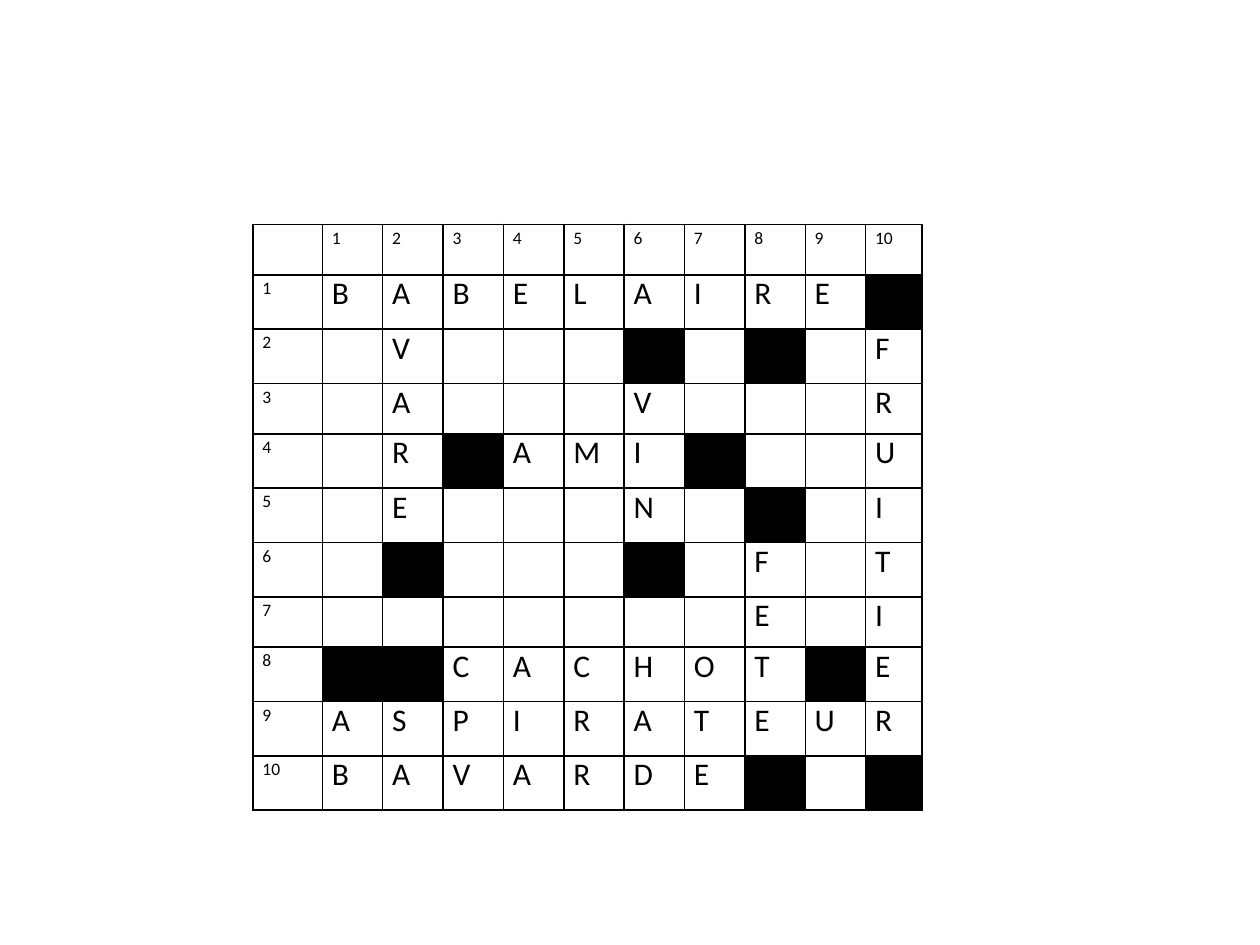
from dataclasses import dataclass

from lxml.etree import SubElement
from pptx import Presentation
from pptx.dml.color import RGBColor
from pptx.oxml.ns import qn
from pptx.util import Pt


@dataclass(frozen=True)
class Theme:
    font: str = "Calibri"
    ink: str = "000000"
    paper: str = "FFFFFF"
    number_size: float = 10
    letter_size: float = 18
    border_width: float = 1
    side_margin: float = 5.4


THEME = Theme()

# One string per row: "#" is a black square, "." an empty one
CROSSWORD = [
    "BABELAIRE#",
    ".V...#.#.F",
    ".A...V...R",
    ".R#AMI#..U",
    ".E...N.#.I",
    ".#...#.F.T",
    ".......E.I",
    "##CACHOT#E",
    "ASPIRATEUR",
    "BAVARDE#.#",
]
SIZE = len(CROSSWORD)

# Grid measures in points
LEFT, TOP = 144.6, 128.2
COLUMN_WIDTHS = [39.6] + [34.5] * (SIZE - 1) + [32.2]
SHORT_ROWS = {0, 3, 7}
ROW_HEIGHTS = [28.8 if row in SHORT_ROWS else 31.05 for row in range(SIZE + 1)]


def write_text(cell, text, *, size, line_spacing=1.0):
    paragraph = cell.text_frame.paragraphs[0]
    paragraph.line_spacing = line_spacing
    run = paragraph.add_run()
    run.text = text
    run.font.name = THEME.font
    run.font.size = Pt(size)
    run.font.color.rgb = RGBColor.from_string(THEME.ink)


def format_cell(cell):
    cell.margin_left = cell.margin_right = Pt(THEME.side_margin)
    cell.margin_top = cell.margin_bottom = 0
    properties = cell._tc.get_or_add_tcPr()
    for side in ("a:lnL", "a:lnR", "a:lnT", "a:lnB"):
        line = SubElement(properties, qn(side), w=str(Pt(THEME.border_width)))
        fill = SubElement(line, qn("a:solidFill"))
        SubElement(fill, qn("a:srgbClr"), val=THEME.ink)


def fill_number(cell, number):
    format_cell(cell)
    cell.fill.background()
    if number:
        write_text(cell, str(number), size=THEME.number_size, line_spacing=1.15)


def fill_square(cell, symbol):
    format_cell(cell)
    cell.fill.solid()
    color = THEME.ink if symbol == "#" else THEME.paper
    cell.fill.fore_color.rgb = RGBColor.from_string(color)
    if symbol.isalpha():
        write_text(cell, symbol, size=THEME.letter_size)


def add_grid(slide):
    frame = slide.shapes.add_table(
        SIZE + 1, SIZE + 1, Pt(LEFT), Pt(TOP),
        Pt(sum(COLUMN_WIDTHS)), Pt(sum(ROW_HEIGHTS)),
    )
    table = frame.table
    table.first_row = table.horz_banding = False
    for column, width in zip(table.columns, COLUMN_WIDTHS):
        column.width = Pt(width)
    for row, height in zip(table.rows, ROW_HEIGHTS):
        row.height = Pt(height)
    return table


def main():
    presentation = Presentation()
    presentation.slide_width, presentation.slide_height = Pt(720), Pt(540)
    slide = presentation.slides.add_slide(presentation.slide_layouts[6])
    table = add_grid(slide)

    # Numbers along the top and the left side
    for number in range(SIZE + 1):
        fill_number(table.cell(0, number), number)
        if number:
            fill_number(table.cell(number, 0), number)

    # Letters and black squares
    for row, symbols in enumerate(CROSSWORD, start=1):
        for column, symbol in enumerate(symbols, start=1):
            fill_square(table.cell(row, column), symbol)

    presentation.save("out.pptx")


if __name__ == "__main__":
    main()
